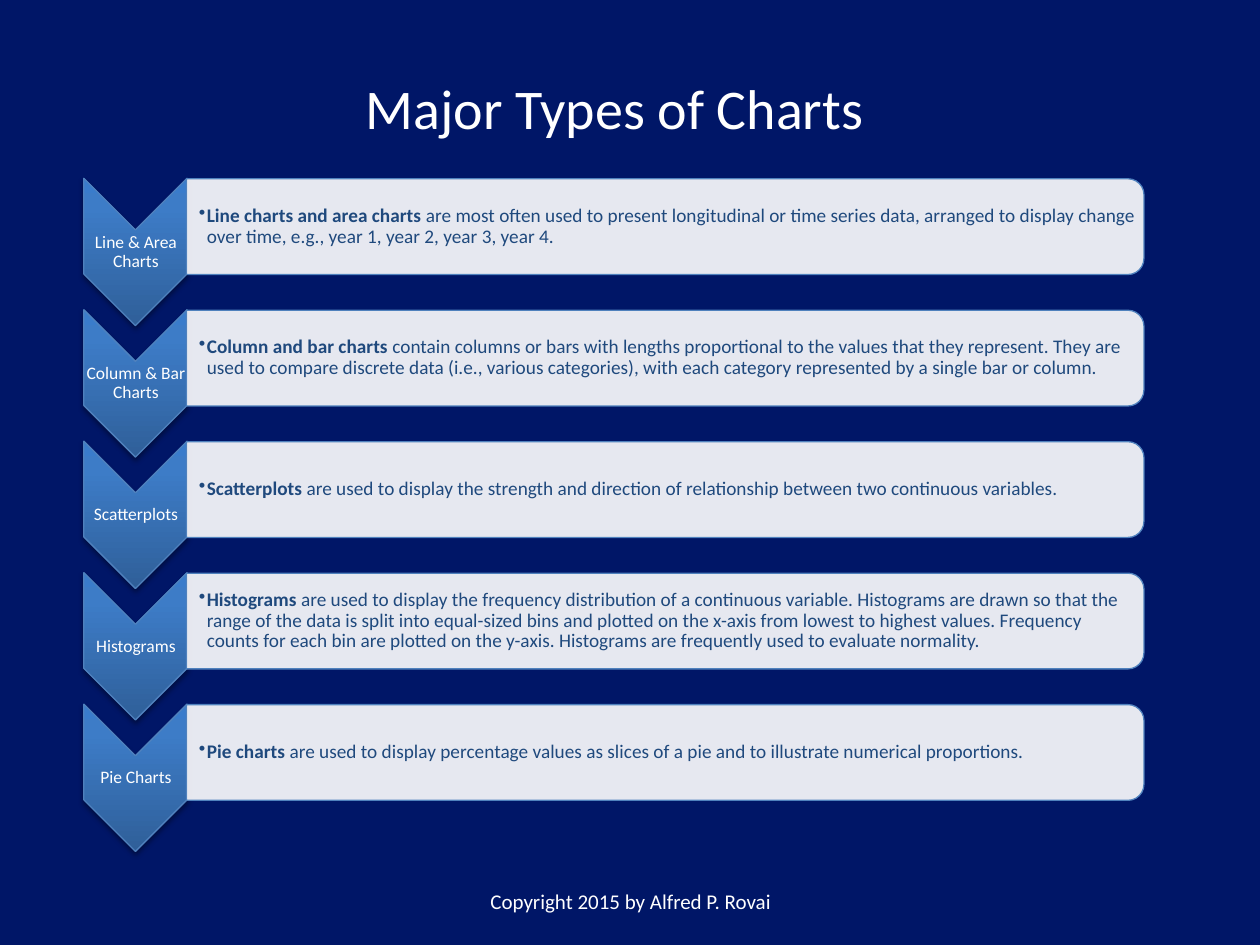
from lxml import etree
from pptx import Presentation
from pptx.dml.color import RGBColor
from pptx.enum.shapes import MSO_SHAPE
from pptx.enum.text import MSO_ANCHOR, PP_ALIGN
from pptx.oxml import parse_xml
from pptx.oxml.ns import nsdecls, qn
from pptx.util import Cm, Pt

CHEVRON = MSO_SHAPE.CHEVRON
ROUND = MSO_SHAPE.ROUND_2_SAME_RECTANGLE
MIDDLE = MSO_ANCHOR.MIDDLE
CENTER, LEFT = PP_ALIGN.CENTER, PP_ALIGN.LEFT

COLORS = {"back": "001667", "white": "FFFFFF", "line": "4F81BD", "text": "1F497D",
          "low": "2F5F99", "mid": "3D7CC7", "top": "3A7CCB", "shade": "000000"}
STOPS = [(0, "low"), (80, "mid"), (100, "top")]

ROWS = [
    ("Line & Area Charts", "Line charts and area charts",
     " are most often used to present longitudinal or time series data, arranged to "
     "display change over time, e.g., year 1, year 2, year 3, year 4."),
    ("Column & Bar Charts", "Column and bar charts",
     " contain columns or bars with lengths proportional to the values that they "
     "represent. They are used to compare discrete data (i.e., various categories), "
     "with each category represented by a single bar or column."),
    ("Scatterplots", "Scatterplots",
     " are used to display the strength and direction of relationship between two "
     "continuous variables."),
    ("Histograms", "Histograms",
     " are used to display the frequency distribution of a continuous variable. "
     "Histograms are drawn so that the range of the data is split into equal-sized "
     "bins and plotted on the x-axis from lowest to highest values. Frequency counts "
     "for each bin are plotted on the y-axis. Histograms are frequently used to "
     "evaluate normality."),
    ("Pie Charts", "Pie charts",
     " are used to display percentage values as slices of a pie and to illustrate "
     "numerical proportions."),
]


def write(box, runs, size, color, align=CENTER, inset=None):
    frame = box.text_frame
    frame.word_wrap = True
    frame.vertical_anchor = MIDDLE
    para = frame.paragraphs[0]
    para.alignment = align
    if inset is not None:
        frame.margin_left = Cm(inset)
        frame.margin_right = frame.margin_top = frame.margin_bottom = Cm(0.03)
        para.line_spacing = 0.9
    for text, bold in runs:
        run = para.add_run()
        run.text = text
        font = run.font
        font.name, font.size, font.bold = "Calibri", Pt(size), bold
        font.color.rgb = RGBColor.from_string(COLORS[color])
    return para


def turned(kind, mid_x, mid_y, width, height):
    shape = slide.shapes.add_shape(kind, Cm(mid_x - width / 2), Cm(mid_y - height / 2),
                                   Cm(width), Cm(height))
    shape.rotation = 90
    shape.shadow.inherit = False
    shape.line.color.rgb = RGBColor.from_string(COLORS["line"])
    shape.line.width = Pt(0.75)
    return shape


deck = Presentation()
deck.slide_width, deck.slide_height = Cm(25.4), Cm(19.05)
slide = deck.slides.add_slide(deck.slide_layouts[5])
fill = slide.background.fill
fill.solid()
fill.fore_color.rgb = RGBColor.from_string(COLORS["back"])

title = slide.shapes.title
title.left, title.top, title.width, title.height = Cm(1.7), Cm(1.35), Cm(21.39), Cm(1.63)
write(title, [("Major Types of Charts", False)], 32, "white")

foot = slide.shapes.add_textbox(Cm(8.69), Cm(17.65), Cm(8.05), Cm(1.02))
write(foot, [("Copyright 2015 by Alfred P. Rovai", False)], 12, "white")

for row, (name, head, body) in enumerate(ROWS):
    y = 4.57 + row * 2.65

    arrow = turned(CHEVRON, 2.73, y + 0.51, 2.97, 2.08)
    stops = "".join(f'<a:gs pos="{pos * 1000}"><a:srgbClr val="{COLORS[key]}"/></a:gs>'
                    for pos, key in STOPS)
    grad = parse_xml(f'<a:gradFill {nsdecls("a")} rotWithShape="0"><a:gsLst>{stops}</a:gsLst>'
                     '<a:lin ang="16200000" scaled="0"/></a:gradFill>')
    props = arrow._element.spPr
    props.find(qn("a:prstGeom")).addnext(grad)
    props.find(qn("a:effectLst")).append(parse_xml(
        f'<a:outerShdw {nsdecls("a")} blurRad="39400" dist="22900" dir="5400000" '
        f'rotWithShape="0"><a:srgbClr val="{COLORS["shade"]}"><a:alpha val="35000"/>'
        '</a:srgbClr></a:outerShdw>'))

    label = slide.shapes.add_textbox(Cm(1.7), Cm(y + 0.07), Cm(2.08), Cm(0.89))
    write(label, [(name, False)], 10, "white", inset=0.03)

    bar = turned(ROUND, 13.41, y, 1.93, 19.3)
    bar.fill.solid()
    bar.fill.fore_color.rgb = RGBColor.from_string(COLORS["white"])
    tint = bar._element.spPr.find(qn("a:solidFill"))[0]
    etree.SubElement(tint, qn("a:alpha"), val="90000")

    note = slide.shapes.add_textbox(Cm(3.78), Cm(y - 0.88), Cm(19.2), Cm(1.75))
    para = write(note, [(head, True), (body, False)], 11, "text", LEFT, 0.23)
    para.level = 1
    props = para._p.get_or_add_pPr()
    props.set("marL", str(Cm(0.16)))
    props.set("indent", str(-Cm(0.16)))
    etree.SubElement(props, qn("a:buChar"), char="•")

deck.save("out.pptx")
